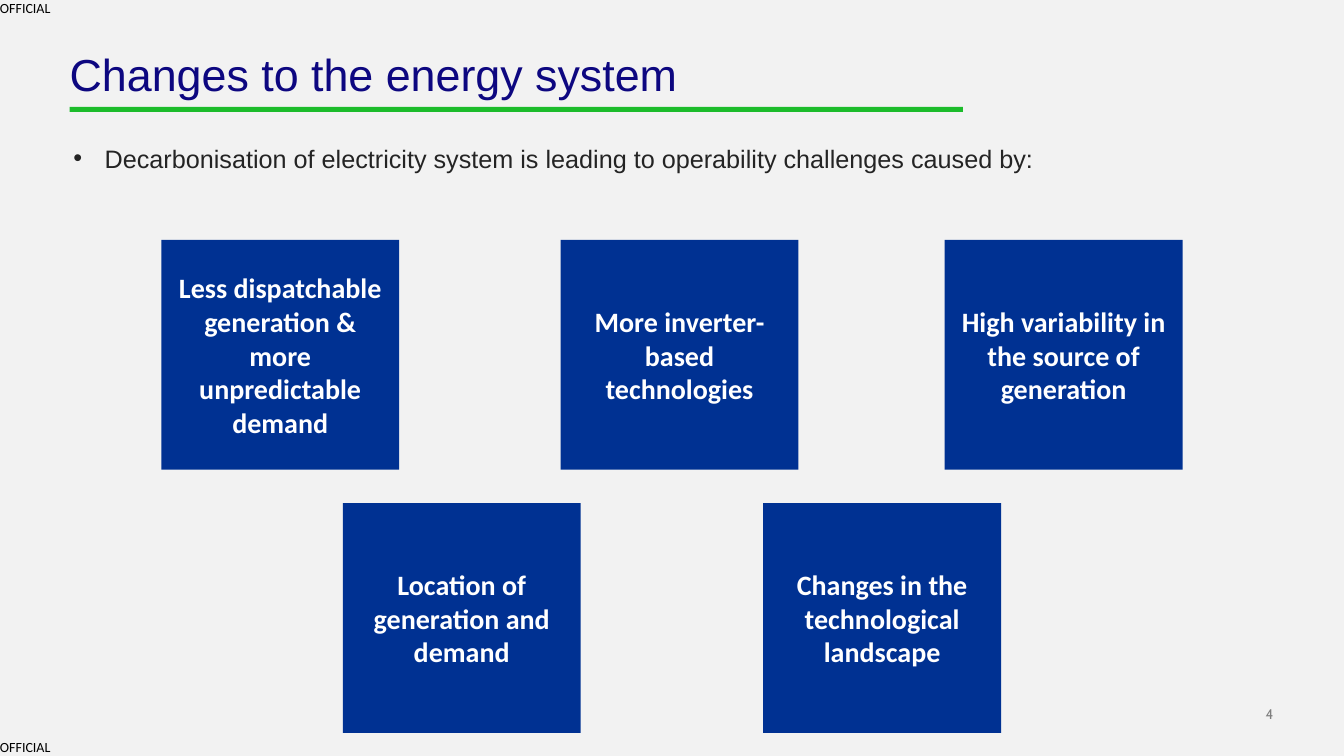
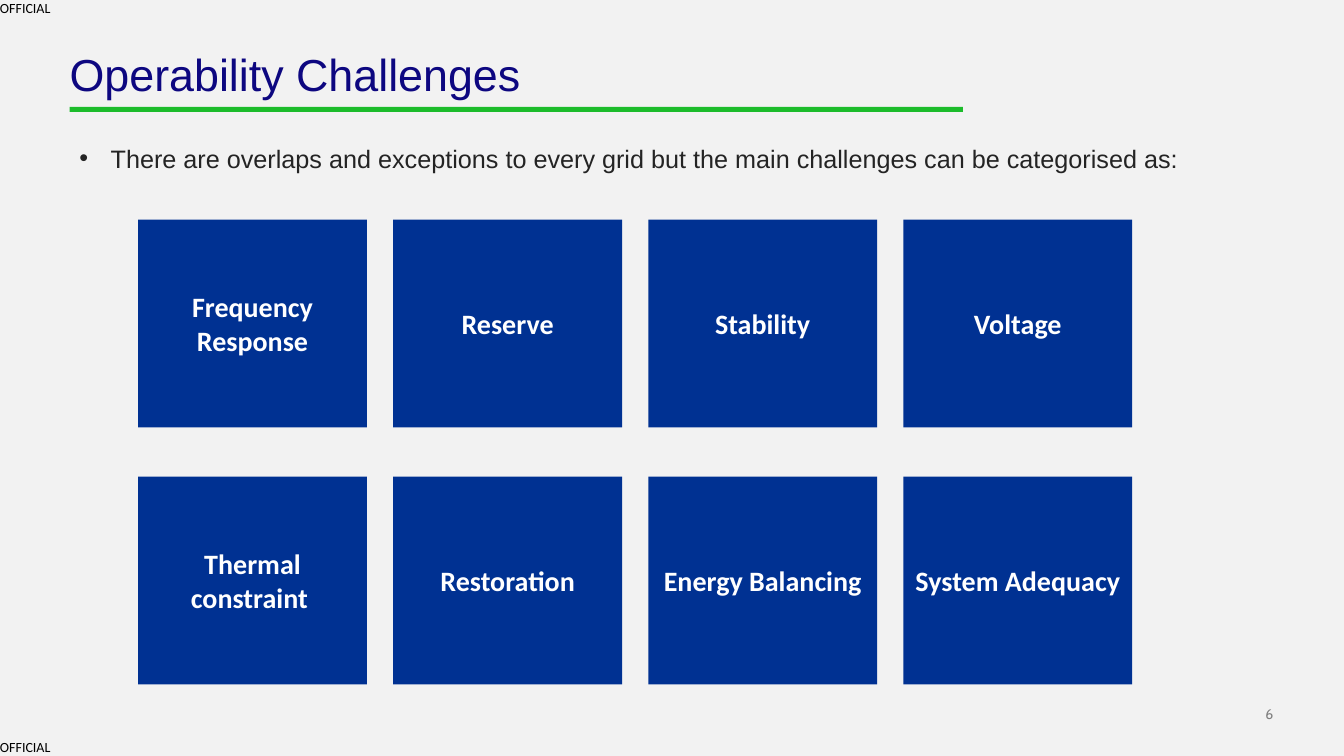
"""Build two slides on how the energy system is changing and the operability challenges."""
from dataclasses import dataclass

from lxml import etree
from pptx import Presentation
from pptx import util as u
from pptx.dml.color import RGBColor
from pptx.enum import shapes, text
from pptx.oxml.ns import qn


@dataclass(frozen=True)
class Theme:
    back: str = "F2F2F2"
    title: str = "0D0780"
    rule: str = "1CBC2B"
    body: str = "242424"
    tile: str = "003192"
    tile_text: str = "FFFFFF"
    mark: str = "000000"
    number: str = "7F7F7F"
    sans: str = "Arial"
    label: str = "Calibri"
    folio: str = "Cabin"
    title_pt: int = 32
    body_pt: int = 18
    tile_pt: int = 20
    small_pt: int = 10


T = Theme()
W, H = 13.33, 7.5
MARK = "OFFICIAL"
COLUMNS = [1.37 + 2.53 * i for i in range(4)]

SLIDES = [
    {
        "title": "Changes to the energy system",
        "number": "4",
        "lead": "Decarbonisation of electricity system is leading to operability challenges caused by:",
        "lead_left": 0.63,
        "tile": (2.36, 2.28),
        "top": 2.38,
        "pitch": 2.61,
        "rows": [
            ([1.6, 5.56, 9.37], [
                "Less dispatchable generation & more unpredictable demand",
                "More inverter-based technologies",
                "High variability in the source of generation",
            ]),
            ([3.4, 7.57], [
                "Location of generation and demand",
                "Changes in the technological landscape",
            ]),
        ],
    },
    {
        "title": "Operability Challenges",
        "number": "6",
        "lead": "There are overlaps and exceptions to every grid but the main challenges can be categorised as:",
        "lead_left": 0.69,
        "tile": (2.27, 2.06),
        "top": 2.18,
        "pitch": 2.55,
        "rows": [
            (COLUMNS, ["Frequency Response", "Reserve", "Stability", "Voltage"]),
            (COLUMNS, ["Thermal constraint ", "Restoration", "Energy Balancing", "System Adequacy"]),
        ],
    },
]


def rgb(value):
    return RGBColor.from_string(value)


def place(sp, left, top, width, height):
    sp.left, sp.top, sp.width, sp.height = map(u.Inches, (left, top, width, height))


def write(sp, words, font, size, color, bold=False, align=text.PP_ALIGN.LEFT,
          anchor=text.MSO_ANCHOR.TOP, inset=True):
    tf = sp.text_frame
    tf.word_wrap = True
    tf.auto_size = text.MSO_AUTO_SIZE.NONE
    tf.vertical_anchor = anchor
    if not inset:
        tf.margin_left = tf.margin_right = tf.margin_top = tf.margin_bottom = 0
    p = tf.paragraphs[0]
    p.alignment = align
    r = p.add_run()
    r.text = words
    r.font.name, r.font.size, r.font.bold = font, u.Pt(size), bold
    r.font.color.rgb = rgb(color)
    return p


def add_text(s, box, *args, **kwargs):
    return write(s.shapes.add_textbox(*map(u.Inches, box)), *args, **kwargs)


def add_rect(s, box, color):
    sp = s.shapes.add_shape(shapes.MSO_SHAPE.RECTANGLE, *map(u.Inches, box))
    sp.shadow.inherit = False
    sp.fill.solid()
    sp.fill.fore_color.rgb = rgb(color)
    sp.line.fill.background()
    return sp


def add_frame(s, title, number):
    for top in (0, H - 0.17):
        add_text(s, (0, top, 0.53, 0.17), MARK, T.label, T.small_pt, T.mark, inset=False)
    add_text(s, (12.21, 7, 0.42, 0.17), number, T.folio, T.small_pt, T.number,
             align=text.PP_ALIGN.RIGHT, anchor=text.MSO_ANCHOR.BOTTOM, inset=False)
    add_rect(s, (0.69, 1.06, 8.86, 0.05), T.rule)
    place(s.shapes.title, 0.69, 0.52, 8.86, 0.48)
    p = write(s.shapes.title, title, T.sans, T.title_pt, T.title, inset=False)
    p.line_spacing = 0.9


def add_lead(s, left, words):
    p = add_text(s, (left, 1.37, 12.34, 0.71), words, T.sans, T.body_pt, T.body)
    pPr = p._p.get_or_add_pPr()
    indent = u.Inches(0.31)
    pPr.set("marL", str(indent))
    pPr.set("indent", str(-indent))
    etree.SubElement(pPr, qn("a:buFont"), typeface=T.sans)
    etree.SubElement(pPr, qn("a:buChar"), char="•")


def add_tiles(s, rows, size, top, pitch):
    for i, (lefts, labels) in enumerate(rows):
        for left, words in zip(lefts, labels):
            sp = add_rect(s, (left, top + i * pitch, *size), T.tile)
            write(sp, words, T.label, T.tile_pt, T.tile_text, bold=True,
                  align=text.PP_ALIGN.CENTER, anchor=text.MSO_ANCHOR.MIDDLE)


def main():
    prs = Presentation()
    prs.slide_width, prs.slide_height = u.Inches(W), u.Inches(H)
    fill = prs.slide_master.background.fill
    fill.solid()
    fill.fore_color.rgb = rgb(T.back)
    for page in SLIDES:
        s = prs.slides.add_slide(prs.slide_layouts[5])
        add_frame(s, page["title"], page["number"])
        add_lead(s, page["lead_left"], page["lead"])
        add_tiles(s, page["rows"], page["tile"], page["top"], page["pitch"])
    prs.save("out.pptx")


if __name__ == "__main__":
    main()
